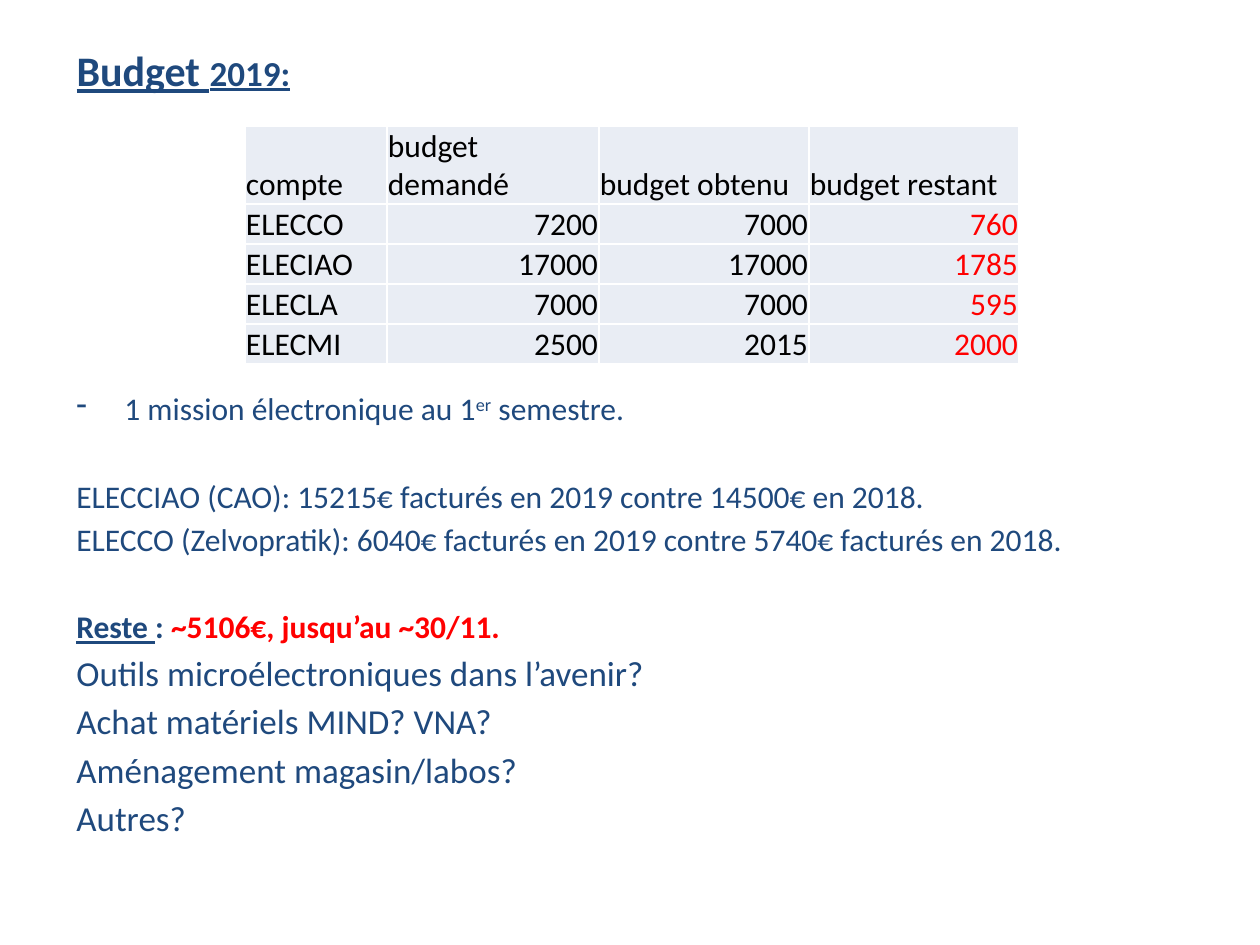
"""Build the 2019 budget slide: heading, account table and remarks."""
from lxml import etree
from pptx import Presentation
from pptx import util as u
from pptx.dml.color import RGBColor
from pptx.enum import text
from pptx.oxml.ns import qn

COLORS = {"navy": "1F497D", "red": "FF0000", "black": "000000", "cell": "E9EDF4"}
FONT = "Calibri"
SLIDE = (1260, 945)
HEADING_BOX = (64, 38, 1134, 64)
REMARKS_BOX = (64, 383, 1134, 500)
TABLE_ORIGIN = (245, 126)
COLUMN_WIDTHS = (142, 212, 210, 210)
ROW_HEIGHTS = (78, 40, 40, 40, 40)
BULLET_INDENT = 48
GAP_LINE = 25.1

HEADING = [("Budget ", 24), ("2019:", 20)]
ACCOUNTS = [
    ("compte", "budget demandé", "budget obtenu", "budget restant"),
    ("ELECCO", 7200, 7000, 760),
    ("ELECIAO", 17000, 17000, 1785),
    ("ELECLA", 7000, 7000, 595),
    ("ELECMI", 2500, 2015, 2000),
]
REMARKS = [
    {"size": 18, "bullet": "-", "runs": [
        ("1 mission électronique au 1", {}), ("er", {"raised": True}), (" semestre.", {})]},
    {"size": 18, "gap": True, "runs": [
        ("ELECCIAO (CAO): 15215€ facturés en 2019 contre 14500€ en 2018.", {})]},
    {"size": 18, "runs": [
        ("ELECCO (Zelvopratik): 6040€ facturés en 2019 contre 5740€ facturés en 2018.", {})]},
    {"size": 18, "gap": True, "bold": True, "runs": [
        ("Reste ", {"underline": True}), (": ", {}),
        ("~5106€, jusqu’au ~30/11.", {"color": "red"})]},
    {"size": 20, "runs": [("Outils microélectroniques dans l’avenir?", {})]},
    {"size": 20, "runs": [("Achat matériels MIND? VNA?", {})]},
    {"size": 20, "runs": [("Aménagement magasin/labos?", {})]},
    {"size": 20, "runs": [("Autres?", {})]},
]


def px(length):
    return u.Emu(round(length * 9144000 / SLIDE[0]))


def style(font, color, size, bold=False):
    font.name, font.size, font.bold = FONT, u.Pt(size), bold
    font.color.rgb = RGBColor.from_string(COLORS[color])


def add_heading(slide):
    heading = slide.shapes.title
    heading.left, heading.top, heading.width, heading.height = map(px, HEADING_BOX)
    frame = heading.text_frame
    frame.auto_size = text.MSO_AUTO_SIZE.NONE
    frame.vertical_anchor = text.MSO_ANCHOR.TOP
    line = frame.paragraphs[0]
    line.alignment = text.PP_ALIGN.LEFT
    for words, size in HEADING:
        run = line.add_run()
        run.text = words
        style(run.font, "navy", size, bold=True)
        run.font.underline = True


def add_accounts(slide):
    size = sum(COLUMN_WIDTHS), sum(ROW_HEIGHTS)
    accounts = slide.shapes.add_table(
        len(ROW_HEIGHTS), len(COLUMN_WIDTHS), *map(px, TABLE_ORIGIN + size)).table
    accounts.first_row = accounts.horz_banding = False
    for column, width in zip(accounts.columns, COLUMN_WIDTHS):
        column.width = px(width)
    for row, height, values in zip(accounts.rows, ROW_HEIGHTS, ACCOUNTS):
        row.height = px(height)
        for position, (cell, value) in enumerate(zip(row.cells, values)):
            is_number = isinstance(value, int)
            is_remainder = is_number and position == len(values) - 1
            cell.text = str(value)
            cell.fill.solid()
            cell.fill.fore_color.rgb = RGBColor.from_string(COLORS["cell"])
            cell.vertical_anchor = text.MSO_ANCHOR.BOTTOM
            cell.margin_left = cell.margin_right = cell.margin_top = px(1)
            cell.margin_bottom = 0
            line = cell.text_frame.paragraphs[0]
            line.alignment = text.PP_ALIGN.RIGHT if is_number else text.PP_ALIGN.LEFT
            style(line.font, "red" if is_remainder else "black", 18)


def add_bullet(line, mark):
    properties = line._p.get_or_add_pPr()
    properties.set("marL", str(px(BULLET_INDENT)))
    properties.set("indent", str(-px(BULLET_INDENT)))
    etree.SubElement(properties, qn("a:buChar")).set("char", mark)


def add_remarks(slide):
    frame = slide.shapes.add_textbox(*map(px, REMARKS_BOX)).text_frame
    frame.word_wrap = True
    for index, remark in enumerate(REMARKS):
        line = frame.add_paragraph() if index else frame.paragraphs[0]
        size, bold = remark["size"], remark.get("bold", False)
        spacing = size * 0.18 + (GAP_LINE if remark.get("gap") else 0)
        line.space_before = u.Pt(spacing if index else 0)
        if "bullet" in remark:
            add_bullet(line, remark["bullet"])
        for words, look in remark["runs"]:
            run = line.add_run()
            run.text = words
            style(run.font, look.get("color", "navy"), size, bold)
            if look.get("underline"):
                run.font.underline = True
            if look.get("raised"):
                run.font._element.set("baseline", "30000")


def main():
    deck = Presentation()
    deck.slide_width, deck.slide_height = map(px, SLIDE)
    slide = deck.slides.add_slide(deck.slide_layouts.get_by_name("Title Only"))
    add_heading(slide)
    add_accounts(slide)
    add_remarks(slide)
    deck.save("out.pptx")


if __name__ == "__main__":
    main()
